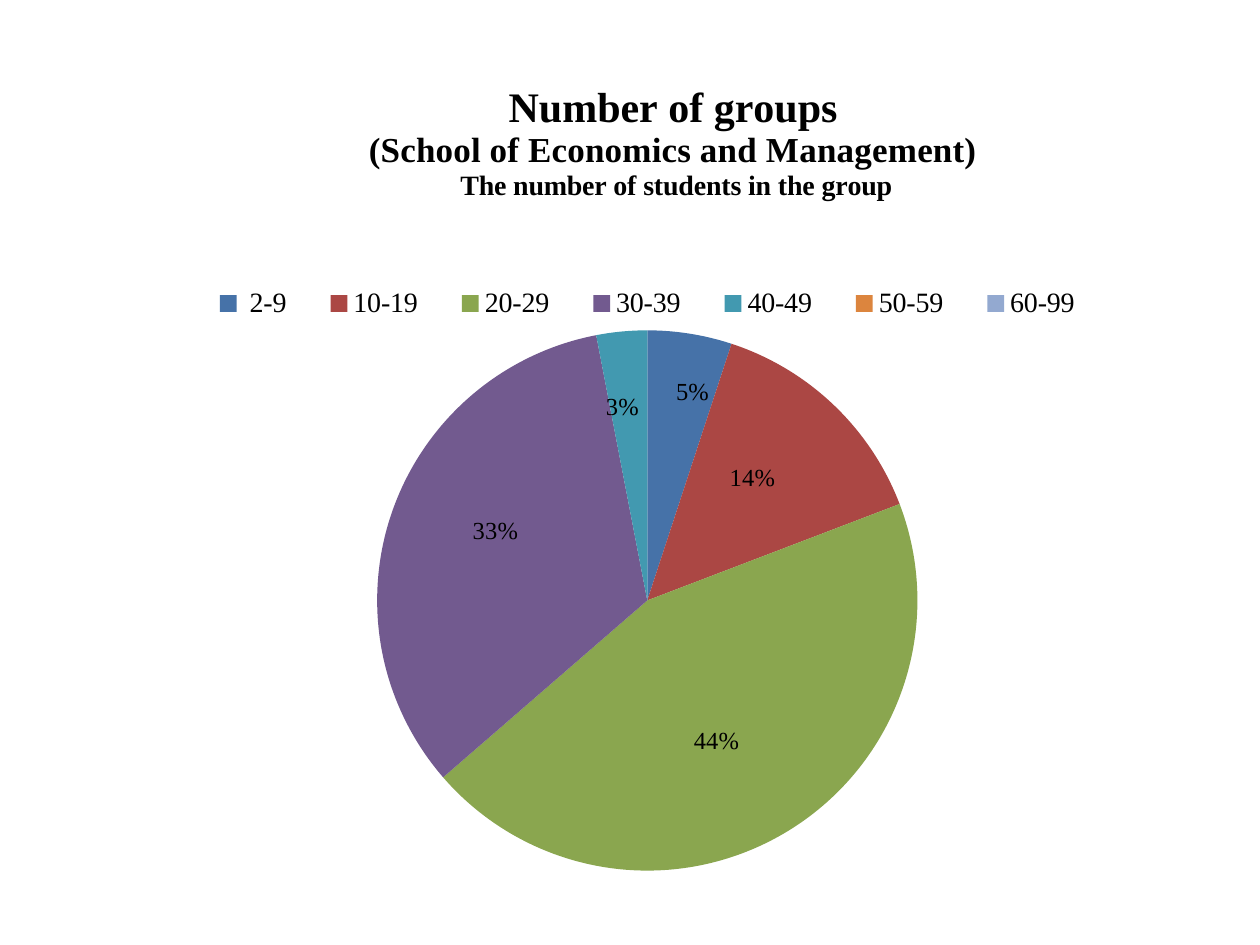
from dataclasses import dataclass
from pptx import Presentation
from pptx.chart.data import CategoryChartData as Data
from pptx.dml.color import RGBColor as Color
from pptx.enum.chart import XL_CHART_TYPE as Kind, XL_LABEL_POSITION as Spot, XL_LEGEND_POSITION as Side
from pptx.enum.text import PP_ALIGN as Align
from pptx.oxml import parse_xml
from pptx.oxml.ns import nsdecls, qn
from pptx.util import Inches, Pt


@dataclass(frozen=True)
class Theme:
    face: str = "Times New Roman"
    ink: str = "000000"
    heads: tuple = (24, 20, 16)
    key: int = 16
    label: int = 14
    fills: tuple = ("4672A8", "AB4744", "8AA64F", "725A8F", "4299B0", "DC853E", "93A9D0")


THEME = Theme()
HEADS = ("Number of groups", "(School of Economics and Management)", " The number of students in the group")
BANDS = (" 2-9", "10-19", "20-29", "30-39", "40-49", "50-59", "60-99")
COUNTS = (5, 14, 44, 33, 3, None, None)
SHIFTS = ((0.02, -0.09), (0.01, -0.03), (0, 0.03), (-0.02, -0.03), (-0.01, -0.07))


def style(font, size, bold=False):
    font.name = THEME.face
    font.size = Pt(size)
    font.bold = bold
    font.color.rgb = Color.from_string(THEME.ink)


def layout(box, inner=False):
    target = '<c:layoutTarget val="inner"/>' if inner else ""
    names = ("x", "y", "w", "h")[:len(box)]
    modes = "".join(f'<c:{n}Mode val="edge"/>' for n in names[:2])
    sizes = "".join(f'<c:{n} val="{v}"/>' for n, v in zip(names, box))
    return parse_xml(f'<c:layout {nsdecls("c")}><c:manualLayout>{target}{modes}{sizes}'
                     '</c:manualLayout></c:layout>')


def place(chart, tag, box, inner=False):
    node = next(chart.element.iter(qn(tag)))
    for old in node.findall(qn("c:layout")):
        node.remove(old)
    if inner:
        node.insert(0, layout(box, True))
    else:
        node.find(qn("c:overlay")).addprevious(layout(box))


def add_title(chart, box):
    chart.has_title = True
    frame = chart.chart_title.text_frame
    for row, (text, size) in enumerate(zip(HEADS, THEME.heads)):
        para = frame.paragraphs[0] if row == 0 else frame.add_paragraph()
        para.text = text
        para.alignment = Align.CENTER
        style(para.font, size, True)
        style(para.runs[0].font, size, True)
    place(chart, "c:title", box)


def add_key(chart, box):
    chart.has_legend = True
    chart.legend.position = Side.TOP
    chart.legend.include_in_layout = False
    style(chart.legend.font, THEME.key)
    place(chart, "c:legend", box)


def add_labels(series):
    labels = series.data_labels
    labels.show_percentage = True
    labels.show_value = False
    labels.position = Spot.CENTER
    style(labels.font, THEME.label)
    root = next(series.format.fill and series.points and labels._element.iter(qn("c:dLbls")))
    for order, (x, y) in enumerate(SHIFTS):
        flags = "".join(f'<c:show{n} val="{int(n == "Percent")}"/>' for n in
                        ("LegendKey", "Val", "CatName", "SerName", "Percent", "BubbleSize"))
        root.insert(order, parse_xml(
            f'<c:dLbl {nsdecls("c")}><c:idx val="{order}"/><c:layout><c:manualLayout>'
            f'<c:x val="{x}"/><c:y val="{y}"/></c:manualLayout></c:layout>'
            f'<c:dLblPos val="ctr"/>{flags}</c:dLbl>'))
    for line in root.findall(qn("c:showLeaderLines")):
        line.set("val", "0")


def add_pie(chart, box):
    plot = chart.plots[0]
    plot.vary_by_categories = True
    series = plot.series[0]
    for order, fill in enumerate(THEME.fills):
        form = series.points[order].format
        form.fill.solid()
        form.fill.fore_color.rgb = Color.from_string(fill)
        form.line.fill.background()
    add_labels(series)
    place(chart, "c:plotArea", box, True)


def add_groups(slide, left, top, width, height):
    data = Data()
    data.categories = BANDS
    data.add_series("Series 1", COUNTS)
    chart = slide.shapes.add_chart(Kind.PIE, left, top, width, height, data).chart
    style(chart.font, 10)
    add_title(chart, (0.28, 0.01))
    add_key(chart, (0.13, 0.25, 0.77, 0.06))
    add_pie(chart, (0.29, 0.31, 0.45, 0.65))


def main():
    deck = Presentation()
    deck.slide_width, deck.slide_height = Inches(10), Inches(7.5)
    slide = deck.slides.add_slide(deck.slide_layouts[6])
    add_groups(slide, Inches(0.23), Inches(0.55), Inches(9.53), Inches(6.64))
    deck.save("out.pptx")


if __name__ == "__main__":
    main()
